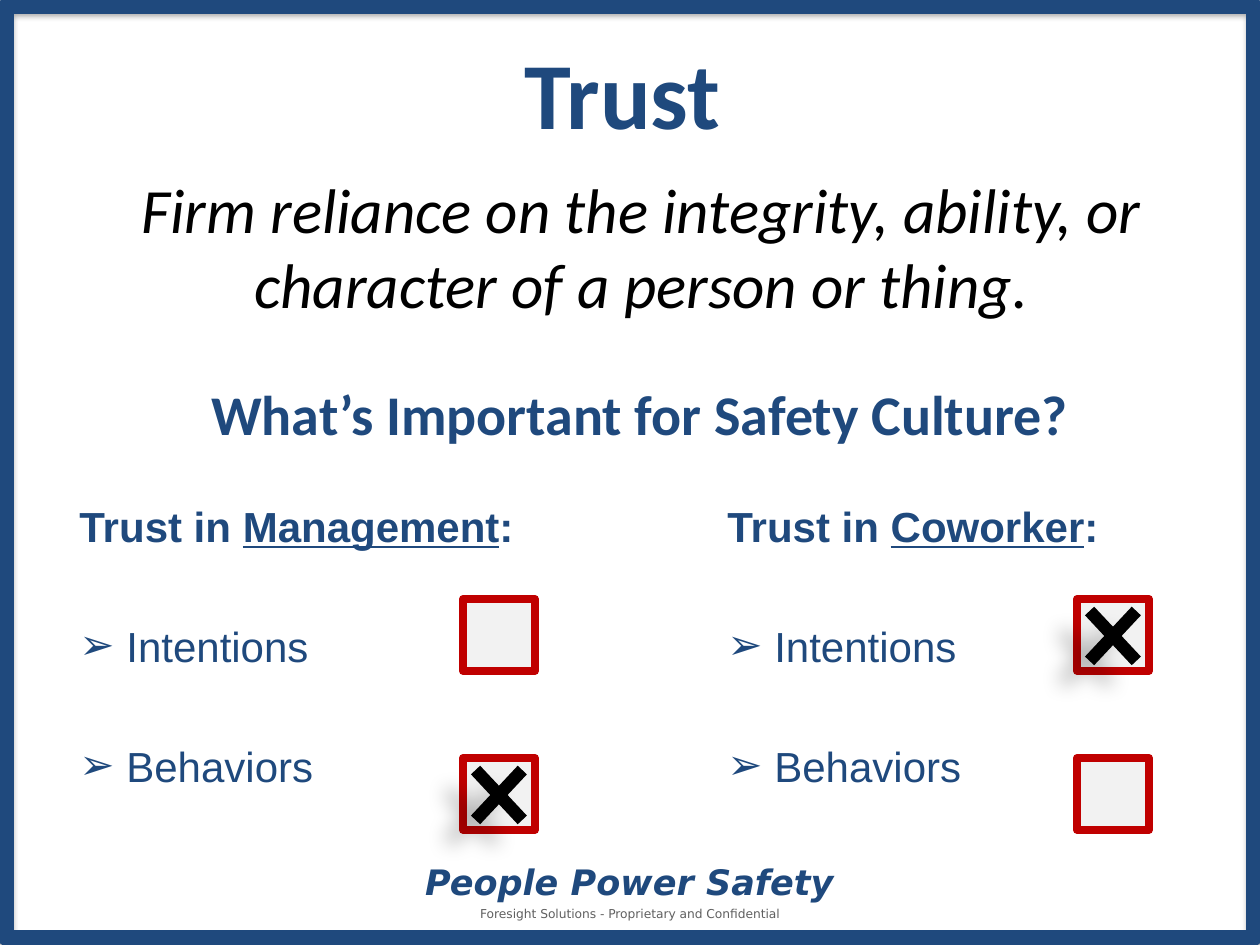
from dataclasses import dataclass

from lxml.etree import SubElement
from pptx import Presentation
from pptx.dml.color import RGBColor
from pptx.enum.shapes import MSO_SHAPE as Preset
from pptx.enum.text import MSO_ANCHOR as Anchor, PP_ALIGN as Align
from pptx.oxml.ns import qn
from pptx.util import Emu, Pt

NAVY, RED, PALE, BLACK, GRAY = "1F497D", "C00000", "F2F2F2", "000000", "606060"
BOX_SIZE = 72
BOX_TOPS = (599, 758)


@dataclass(frozen=True)
class Label:
    text: str
    bounds: tuple[int, int, int, int]
    size: int
    font: str = "Calibri"
    color: str = NAVY
    bold: bool = False
    italic: bool = False
    anchor: Anchor = Anchor.MIDDLE


@dataclass(frozen=True)
class TrustColumn:
    subject: str
    bounds: tuple[int, int, int, int]
    box_left: int
    checked_row: int


@dataclass(frozen=True)
class Shadow:
    opacity: int
    blur: float
    distance: float
    angle: int


LABELS = (
    Label("Foresight Solutions - Proprietary and Confidential", (417, 900, 426, 28), 7,
          "DejaVu Sans", GRAY, anchor=Anchor.TOP),
    Label("People Power Safety", (408, 865, 443, 34), 20, "DejaVu Sans", bold=True, italic=True),
    Label("What’s Important for Safety Culture?", (20, 372, 1240, 82), 32, bold=True),
    Label("Firm reliance on the integrity, ability, or character of a person or thing.",
          (86, 164, 1111, 164), 36, color=BLACK, italic=True, anchor=Anchor.TOP),
    Label("Trust", (0, 38, 1245, 108), 54, bold=True),
)
COLUMNS = (
    TrustColumn("Management", (67, 494, 685, 370), 463, 1),
    TrustColumn("Coworker", (715, 494, 545, 379), 1077, 0),
)


def px(value: int) -> Emu:
    """Convert pixels to EMU."""
    return Emu(round(value * 914400 / 126))


def rgb(value: str) -> RGBColor:
    """Convert a hex string to a colour."""
    return RGBColor.from_string(value)


def add_text_frame(slide, bounds: tuple[int, int, int, int], anchor: Anchor):
    """Add a wrapping text box and return its frame."""
    frame = slide.shapes.add_textbox(*map(px, bounds)).text_frame
    frame.word_wrap = True
    frame.vertical_anchor = anchor
    return frame


def style_run(run, size: int, font: str, color: str, bold: bool, italic: bool = False) -> None:
    """Set the font of one run."""
    run.font.size = Pt(size)
    run.font.name = font
    run.font.color.rgb = rgb(color)
    run.font.bold = bold
    run.font.italic = italic


def add_label(slide, label: Label) -> None:
    """Draw one centred line of text."""
    frame = add_text_frame(slide, label.bounds, label.anchor)
    frame.text = label.text
    paragraph = frame.paragraphs[0]
    paragraph.alignment = Align.CENTER
    style_run(paragraph.runs[0], label.size, label.font, label.color, label.bold, label.italic)


def add_preset(slide, preset: Preset, bounds: tuple[int, int, int, int],
               fill: str | None = None, line: str | None = None, width: float = 0):
    """Draw a preset shape without a theme shadow."""
    shape = slide.shapes.add_shape(preset, *map(px, bounds))
    shape.shadow.inherit = False
    if fill:
        shape.fill.solid()
        shape.fill.fore_color.rgb = rgb(fill)
    else:
        shape.fill.background()
    if line:
        shape.line.color.rgb = rgb(line)
        shape.line.width = Pt(width)
    else:
        shape.line.fill.background()
    return shape


def add_shadow(shape, shadow: Shadow) -> None:
    """Give a shape a soft black outer shadow."""
    effects = shape.element.spPr.find(qn("a:effectLst"))
    outer = SubElement(effects, qn("a:outerShdw"), blurRad=str(Pt(shadow.blur)),
                       dist=str(Pt(shadow.distance)), dir=str(shadow.angle * 60000),
                       algn="ctr", rotWithShape="0")
    color = SubElement(outer, qn("a:srgbClr"), val=BLACK)
    SubElement(color, qn("a:alpha"), val=str(shadow.opacity * 1000))


def add_bullet(paragraph) -> None:
    """Give a paragraph a hanging arrow bullet."""
    properties = paragraph._p.get_or_add_pPr()
    properties.set("marL", str(px(47)))
    properties.set("indent", str(-px(47)))
    SubElement(properties, qn("a:buFont"), typeface="Arial")
    SubElement(properties, qn("a:buChar"), char="➢")


def add_column_text(slide, column: TrustColumn) -> None:
    """Write the heading and bullets of one column."""
    frame = add_text_frame(slide, column.bounds, Anchor.TOP)
    heading = frame.paragraphs[0]
    for text in ("Trust in ", column.subject, ":"):
        run = heading.add_run()
        run.text = text
        style_run(run, 24, "Arial", NAVY, True)
        run.font.underline = text == column.subject
    for text in ("Intentions", "Behaviors"):
        paragraph = frame.add_paragraph()
        paragraph.text = text
        paragraph.space_before = Pt(39.8)
        add_bullet(paragraph)
        style_run(paragraph.runs[0], 24, "Arial", NAVY, False)


def add_checkboxes(slide, column: TrustColumn) -> None:
    """Draw the boxes of one column and cross the checked one."""
    for top in BOX_TOPS:
        add_preset(slide, Preset.RECTANGLE, (column.box_left, top, BOX_SIZE, BOX_SIZE),
                   PALE, RED, 4.5)
    cross_bounds = (column.box_left - 9, BOX_TOPS[column.checked_row] - 11, 90, 96)
    cross = add_preset(slide, Preset.MATH_MULTIPLY, cross_bounds, BLACK)
    cross.adjustments[0] = 0.14
    add_shadow(cross, Shadow(28, 11.8, 19.7, 141))


def main() -> None:
    """Build and save the slide."""
    presentation = Presentation()
    presentation.slide_width, presentation.slide_height = px(1260), px(945)
    slide = presentation.slides.add_slide(presentation.slide_layouts[6])
    frame = add_preset(slide, Preset.RECTANGLE, (6, 6, 1248, 932), line=NAVY, width=8.75)
    add_shadow(frame, Shadow(35, 3.1, 1.8, 90))
    for label in LABELS:
        add_label(slide, label)
    for column in COLUMNS:
        add_column_text(slide, column)
        add_checkboxes(slide, column)
    presentation.save("out.pptx")


if __name__ == "__main__":
    main()
